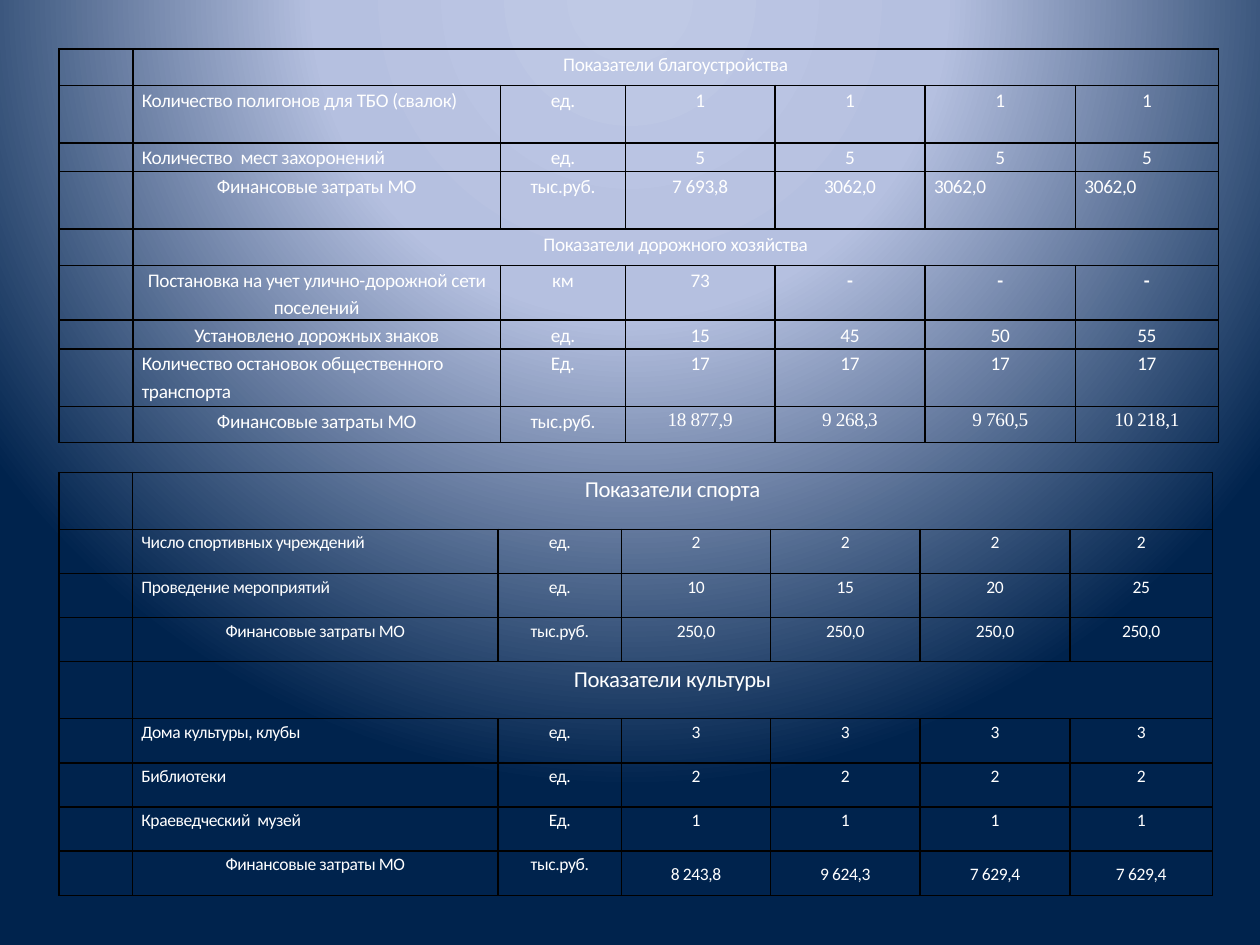
from dataclasses import dataclass
from typing import Optional

import pptx
import pptx.dml.color
import pptx.enum.text
import pptx.oxml
import pptx.oxml.ns
import pptx.util

Cm = pptx.util.Cm
Pt = pptx.util.Pt
RGBColor = pptx.dml.color.RGBColor
Align = pptx.enum.text.PP_ALIGN
Anchor = pptx.enum.text.MSO_ANCHOR

WHITE = RGBColor(0xFF, 0xFF, 0xFF)
BLACK = RGBColor(0x00, 0x00, 0x00)
GLOW = RGBColor(0xBF, 0xC9, 0xE5)
PALE_BLUE = RGBColor(0xB5, 0xC0, 0xE0)
NAVY = RGBColor(0x00, 0x23, 0x4D)
BACKGROUND_STOPS = ((0, GLOW), (40, PALE_BLUE), (100, NAVY))
NAMESPACE = pptx.oxml.ns.nsdecls("a")
COSTS = "Финансовые затраты МО"


@dataclass
class Row:
    """A row without a unit is a section heading across the whole table."""
    height: float
    label: str
    unit: str = ""
    values: tuple[str, ...] = ()
    label_align: Align = Align.LEFT
    left_values: tuple[int, ...] = ()
    bold_values: tuple[int, ...] = ()
    value_font: str = "Calibri"
    value_anchor: Anchor = Anchor.TOP


@dataclass
class Indicators:
    left: float
    top: float
    columns: tuple[float, ...]
    heading_size: int
    body_size: int
    rows: tuple[Row, ...]


IMPROVEMENT_AND_ROADS = Indicators(
    1.19, 0.99, (1.49, 7.41, 2.52, 3.01, 3.03, 3.03, 2.88), 11, 11, (
        Row(0.73, "Показатели благоустройства"),
        Row(1.16, "Количество полигонов для ТБО (свалок)", "ед.", ("1",) * 4),
        Row(0.58, "Количество  мест захоронений", "ед.", ("5",) * 4),
        Row(1.16, COSTS, "тыс.руб.", ("7 693,8", "3062,0", "3062,0", "3062,0"),
            Align.CENTER, left_values=(2, 3)),
        Row(0.73, "Показатели дорожного хозяйства"),
        Row(0.58, "Постановка на учет улично-дорожной сети поселений", "км",
            ("73", "-", "-", "-"), Align.CENTER, bold_values=(1, 2, 3)),
        Row(0.58, "Установлено дорожных знаков", "ед.",
            ("15", "45", "50", "55"), Align.CENTER),
        Row(1.16, "Количество остановок общественного транспорта", "Ед.",
            ("17",) * 4),
        Row(0.73, COSTS, "тыс.руб.",
            ("18 877,9", "9 268,3", "9 760,5", "10 218,1"),
            Align.CENTER, value_font="Times New Roman"),
    ))

SPORT_AND_CULTURE = Indicators(
    1.19, 9.52, (1.48, 7.37, 2.49, 3.0, 3.02, 3.02, 2.87), 13, 10, (
        Row(1.15, "Показатели спорта"),
        Row(0.89, "Число спортивных учреждений", "ед.", ("2",) * 4),
        Row(0.89, "Проведение мероприятий", "ед.", ("10", "15", "20", "25")),
        Row(0.89, COSTS, "тыс.руб.", ("250,0",) * 4, Align.CENTER),
        Row(1.15, "Показатели культуры"),
        Row(0.89, "Дома культуры, клубы", "ед.", ("3",) * 4),
        Row(0.89, "Библиотеки", "ед.", ("2",) * 4),
        Row(0.89, "Краеведческий  музей", "Ед.", ("1",) * 4),
        Row(0.89, COSTS, "тыс.руб.",
            ("8 243,8", "9 624,3", "7 629,4", "7 629,4"),
            Align.CENTER, value_anchor=Anchor.MIDDLE),
    ))


def paint_background(page) -> None:
    page.background.fill.solid()
    solid = page.element.find(".//" + pptx.oxml.ns.qn("a:solidFill"))
    stops = "".join(
        f'<a:gs pos="{percent * 1000}"><a:srgbClr val="{color}"/></a:gs>'
        for percent, color in BACKGROUND_STOPS)
    gradient = pptx.oxml.parse_xml(
        f'<a:gradFill {NAMESPACE} rotWithShape="1"><a:gsLst>{stops}</a:gsLst>'
        '<a:path path="circle"><a:fillToRect l="50000" t="-80000" '
        'r="50000" b="180000"/></a:path></a:gradFill>')
    solid.getparent().replace(solid, gradient)


def prepare_cell(cell) -> None:
    """Clear the fill and margins, keep empty text small, draw black borders."""
    properties = cell._tc.get_or_add_tcPr()
    for side in "LRTB":
        properties.append(pptx.oxml.parse_xml(
            f'<a:ln{side} {NAMESPACE} w="{Pt(1)}"><a:solidFill>'
            f'<a:srgbClr val="{BLACK}"/></a:solidFill></a:ln{side}>'))
    cell.fill.background()
    cell.margin_left = cell.margin_right = Cm(0.18)
    cell.margin_top = cell.margin_bottom = 0
    para = cell.text_frame.paragraphs[0]
    para._p.append(pptx.oxml.parse_xml(f'<a:endParaRPr {NAMESPACE} sz="1000"/>'))


def write(cell, text: str, *, size: int, align: Optional[Align] = Align.CENTER,
          font: str = "Calibri", bold: bool = False,
          anchor: Anchor = Anchor.TOP) -> None:
    cell.vertical_anchor = anchor
    para = cell.text_frame.paragraphs[0]
    para.alignment = align
    para.line_spacing = 1.15
    para.space_after = Pt(10)
    span = para.add_run()
    span.text = text
    span.font.name = font
    span.font.size = Pt(size)
    span.font.bold = bold
    span.font.color.rgb = WHITE
    span._r.get_or_add_rPr().set("spc", "-20")


def fill_row(table, index: int, row: Row, indicators: Indicators) -> None:
    if not row.unit:
        heading = table.cell(index, 1)
        heading.merge(table.cell(index, len(indicators.columns) - 1))
        write(heading, row.label, size=indicators.heading_size)
        return
    size = indicators.body_size
    write(table.cell(index, 1), row.label, size=size, align=row.label_align)
    write(table.cell(index, 2), row.unit, size=size)
    for position, value in enumerate(row.values):
        write(table.cell(index, 3 + position), value, size=size,
              align=Align.LEFT if position in row.left_values else Align.CENTER,
              bold=position in row.bold_values,
              font=row.value_font, anchor=row.value_anchor)


def draw_table(page, indicators: Indicators) -> None:
    rows, columns = indicators.rows, indicators.columns
    table = page.shapes.add_table(
        len(rows), len(columns), Cm(indicators.left), Cm(indicators.top),
        Cm(sum(columns)), Cm(sum(row.height for row in rows))).table
    table.first_row = table.horz_banding = False
    for column, width in zip(table.columns, columns):
        column.width = Cm(width)
    for cell in table.iter_cells():
        prepare_cell(cell)
    for index, row in enumerate(rows):
        table.rows[index].height = Cm(row.height)
        fill_row(table, index, row, indicators)


def main() -> None:
    deck = pptx.Presentation()
    deck.slide_width, deck.slide_height = Cm(25.4), Cm(19.05)
    page = deck.slides.add_slide(deck.slide_layouts[6])
    paint_background(page)
    for indicators in (IMPROVEMENT_AND_ROADS, SPORT_AND_CULTURE):
        draw_table(page, indicators)
    deck.save("out.pptx")


if __name__ == "__main__":
    main()
